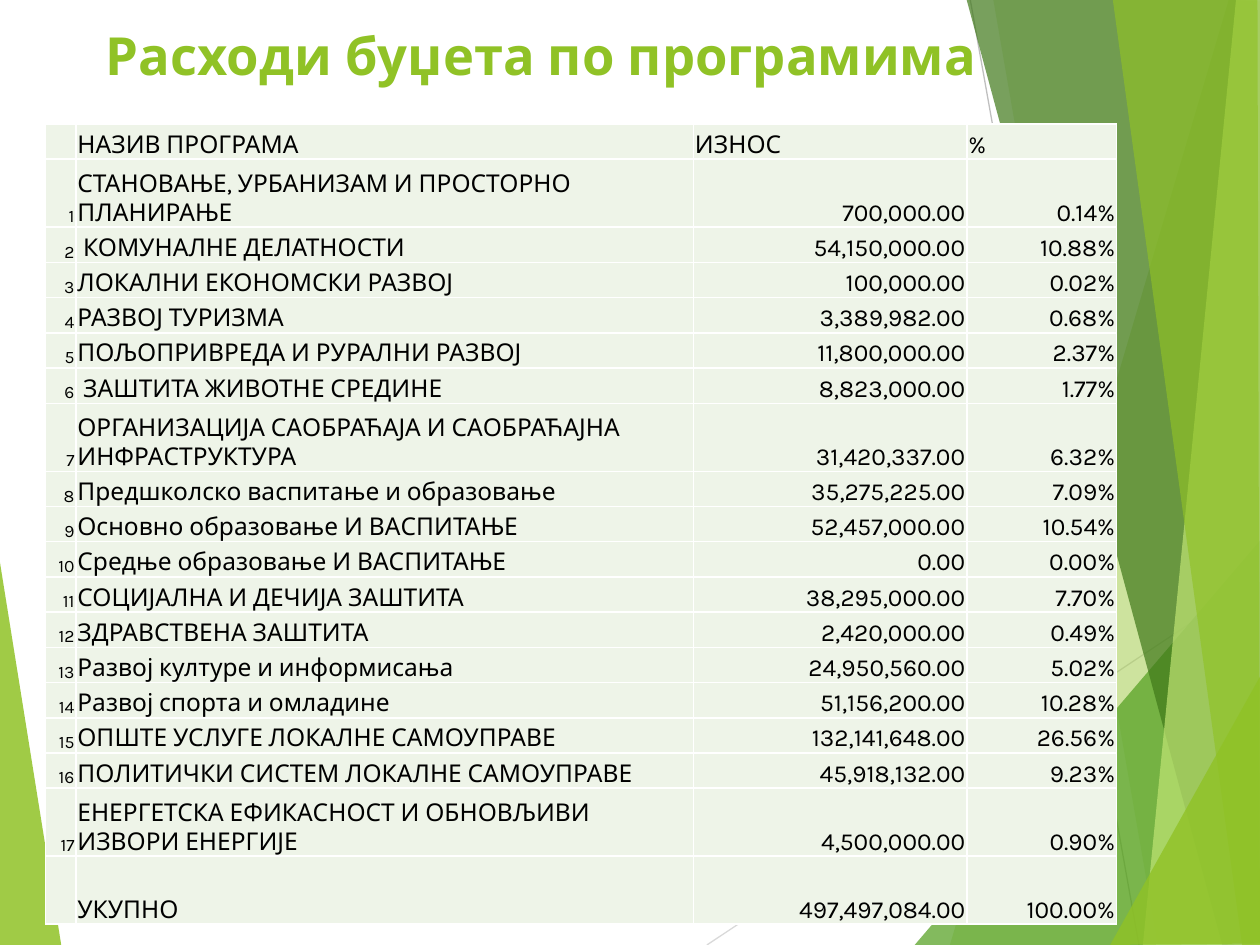
from dataclasses import dataclass

from lxml.etree import SubElement
from pptx import Presentation
from pptx.dml.color import RGBColor
from pptx.enum.shapes import MSO_CONNECTOR
from pptx.enum.text import MSO_ANCHOR, PP_ALIGN
from pptx.oxml.ns import qn
from pptx.util import Cm, Pt


@dataclass(frozen=True)
class Theme:
    """Colours, font and type sizes of the slide."""
    face: str = "Karla"
    lime: str = "90C226"
    leaf: str = "54A021"
    moss: str = "3F7819"
    pale: str = "C0E474"
    mint: str = "EEF4E8"
    ink: str = "000000"
    white: str = "FFFFFF"
    silver: str = "D9D9D9"
    grey: str = "BFBFBF"
    head: int = 30
    body: int = 14
    small: int = 10
    hair: float = 0.75
    rule: float = 1


THEME = Theme()
WIDE, HIGH = 25.4, 19.05

SHARDS = [
    (THEME.lime, 30, [(24.77, 0), (19.15, 19.05), (25.45, 19.08), (25.43, 0.03)]),
    (THEME.lime, 20, [(20.02, -0.03), (23.34, 19.05), (25.43, 19.05), (25.43, -0.03)]),
    (THEME.leaf, 72, [(18.44, 19.05), (25.4, 10.9), (25.43, 19.05)]),
    (THEME.moss, 70, [(19.48, -0.03), (24.64, 19.05), (25.43, 19.02), (25.43, -0.03)]),
    (THEME.pale, 70, [(24.92, -0.03), (23.04, 19.05), (25.43, 19.05), (25.4, -0.03)]),
    (THEME.lime, 65, [(22.43, -0.03), (25.04, 19.05), (25.4, 19.05), (25.35, -0.03)]),
    (THEME.lime, 80, [(22.38, 19.05), (25.43, 13.59), (25.43, 19.02)]),
]
WEDGE = (THEME.lime, 85, [(-0.03, 11.15), (1.24, 19.08), (-0.03, 19.05)])
LINES = [
    (THEME.silver, (14.25, 19.05), (25.43, 11.61)),
    (THEME.grey, (19.56, 0), (22.96, 19.05)),
]

COLS = [0.61, 12.45, 5.51, 3.02]
LOW, TALL = 0.71, 1.37
TALL_ROWS = {1, 7, 17, 18}
HEADS = ("", "НАЗИВ ПРОГРАМА", "ИЗНОС", "%")
ITEMS = [
    ("СТАНОВАЊЕ, УРБАНИЗАМ И ПРОСТОРНО ПЛАНИРАЊЕ", "700,000.00", "0.14%"),
    (" КОМУНАЛНЕ ДЕЛАТНОСТИ", "54,150,000.00", "10.88%"),
    ("ЛОКАЛНИ ЕКОНОМСКИ РАЗВОЈ", "100,000.00", "0.02%"),
    ("РАЗВОЈ ТУРИЗМА", "3,389,982.00", "0.68%"),
    ("ПОЉОПРИВРЕДА И РУРАЛНИ РАЗВОЈ", "11,800,000.00", "2.37%"),
    (" ЗАШТИТА ЖИВОТНЕ СРЕДИНЕ", "8,823,000.00", "1.77%"),
    ("ОРГАНИЗАЦИЈА САОБРАЋАЈА И САОБРАЋАЈНА ИНФРАСТРУКТУРА", "31,420,337.00", "6.32%"),
    ("Предшколско васпитање и образовање", "35,275,225.00", "7.09%"),
    ("Основно образовање И ВАСПИТАЊЕ", "52,457,000.00", "10.54%"),
    ("Средње образовање И ВАСПИТАЊЕ", "0.00", "0.00%"),
    ("СОЦИЈАЛНА И ДЕЧИЈА ЗАШТИТА", "38,295,000.00", "7.70%"),
    ("ЗДРАВСТВЕНА ЗАШТИТА", "2,420,000.00", "0.49%"),
    ("Развој културе и информисања", "24,950,560.00", "5.02%"),
    ("Развој спорта и омладине", "51,156,200.00", "10.28%"),
    ("ОПШТЕ УСЛУГЕ ЛОКАЛНЕ САМОУПРАВЕ", "132,141,648.00", "26.56%"),
    ("ПОЛИТИЧКИ СИСТЕМ ЛОКАЛНЕ САМОУПРАВЕ", "45,918,132.00", "9.23%"),
    ("ЕНЕРГЕТСКА ЕФИКАСНОСТ И ОБНОВЉИВИ ИЗВОРИ ЕНЕРГИЈЕ", "4,500,000.00", "0.90%"),
]
TOTAL = ("", "УКУПНО", "497,497,084.00", "100.00%")


def tint(hue):
    """Turn a hex colour into an RGBColor."""
    return RGBColor.from_string(hue)


def style(para, size, hue, side, bold=False):
    """Set the font and alignment of one paragraph."""
    para.alignment = side
    para.font.name = THEME.face
    para.font.size = Pt(size)
    para.font.bold = bold
    para.font.color.rgb = tint(hue)


def add_shard(slide, box, hue, alpha, points):
    """Draw one see-through polygon inside the box."""
    left, top = box[:2]
    dots = [(Cm(left + x), Cm(top + y)) for x, y in points]
    pen = slide.shapes.build_freeform(*dots[0])
    pen.add_line_segments(dots[1:], close=True)
    shard = pen.convert_to_shape()
    shard.shadow.inherit = False
    shard.line.fill.background()
    shard.fill.solid()
    shard.fill.fore_color.rgb = tint(hue)
    color = shard.element.spPr.find(qn("a:solidFill")).find(qn("a:srgbClr"))
    SubElement(color, qn("a:alpha"), val=str(alpha * 1000))


def add_line(slide, box, hue, start, end):
    """Draw one thin straight line inside the box."""
    left, top = box[:2]
    ends = [Cm(base + step) for spot in (start, end)
            for base, step in zip((left, top), spot)]
    line = slide.shapes.add_connector(MSO_CONNECTOR.STRAIGHT, *ends)
    line.line.color.rgb = tint(hue)
    line.line.width = Pt(THEME.hair)
    SubElement(line.element.spPr, qn("a:effectLst"))


def add_backdrop(slide, box):
    """Draw the green facets and thin lines behind the content."""
    add_shard(slide, box, *WEDGE)
    for line in LINES:
        add_line(slide, box, *line)
    for shard in SHARDS:
        add_shard(slide, box, *shard)


def add_title(slide, box, text):
    """Place the title above the backdrop."""
    title = slide.shapes.title
    title.element.getparent().append(title.element)
    title.left, title.top, title.width, title.height = map(Cm, box)
    frame = title.text_frame
    frame.text = text
    frame.word_wrap = True
    frame.vertical_anchor = MSO_ANCHOR.TOP
    style(frame.paragraphs[0], THEME.head, THEME.lime, PP_ALIGN.LEFT, bold=True)


def add_edges(cell):
    """Give a cell white rules on all four sides."""
    props = cell._tc.get_or_add_tcPr()
    for side in ("lnL", "lnR", "lnT", "lnB"):
        edge = SubElement(props, qn(f"a:{side}"), w=str(Pt(THEME.rule)))
        SubElement(SubElement(edge, qn("a:solidFill")), qn("a:srgbClr"), val=THEME.white)


def fill_cell(cell, text, size, side):
    """Write and format one table cell."""
    add_edges(cell)
    cell.fill.solid()
    cell.fill.fore_color.rgb = tint(THEME.mint)
    cell.margin_left = cell.margin_right = cell.margin_top = Cm(0.03)
    cell.margin_bottom = 0
    cell.vertical_anchor = MSO_ANCHOR.BOTTOM
    cell.text = text
    style(cell.text_frame.paragraphs[0], size, THEME.ink, side)


def add_budget(slide, box):
    """Build the table of budget programs."""
    rows = [HEADS, *((str(n), *item) for n, item in enumerate(ITEMS, 1)), TOTAL]
    table = slide.shapes.add_table(len(rows), len(COLS), *map(Cm, box)).table
    table.first_row = table.horz_banding = False
    for col, width in zip(table.columns, COLS):
        col.width = Cm(width)
    for r, row in enumerate(rows):
        table.rows[r].height = Cm(TALL if r in TALL_ROWS else LOW)
        for c, text in enumerate(row):
            size = THEME.body if c else THEME.small
            side = PP_ALIGN.LEFT if r == 0 or c == 1 else PP_ALIGN.RIGHT
            fill_cell(table.cell(r, c), text, size, side)


def main():
    """Build and save the slide."""
    deck = Presentation()
    deck.slide_width, deck.slide_height = Cm(WIDE), Cm(HIGH)
    slide = deck.slides.add_slide(deck.slide_layouts[5])
    add_backdrop(slide, (0, 0, WIDE, HIGH))
    add_title(slide, (1.88, 0.33, 21.64, 2.16), "Расходи буџета по програмима")
    add_budget(slide, (0.92, 2.5, sum(COLS), 16.15))
    deck.save("out.pptx")


if __name__ == "__main__":
    main()
